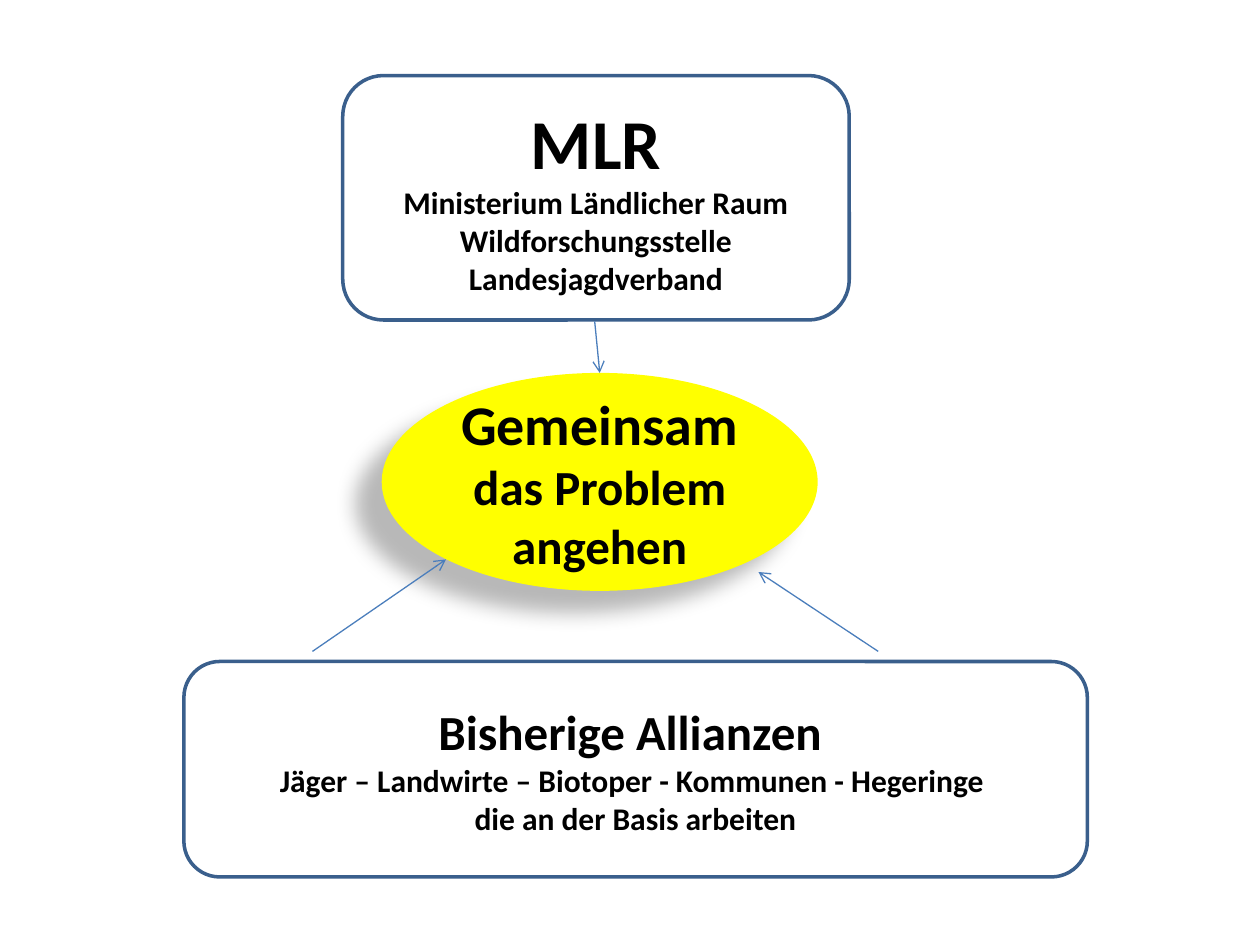
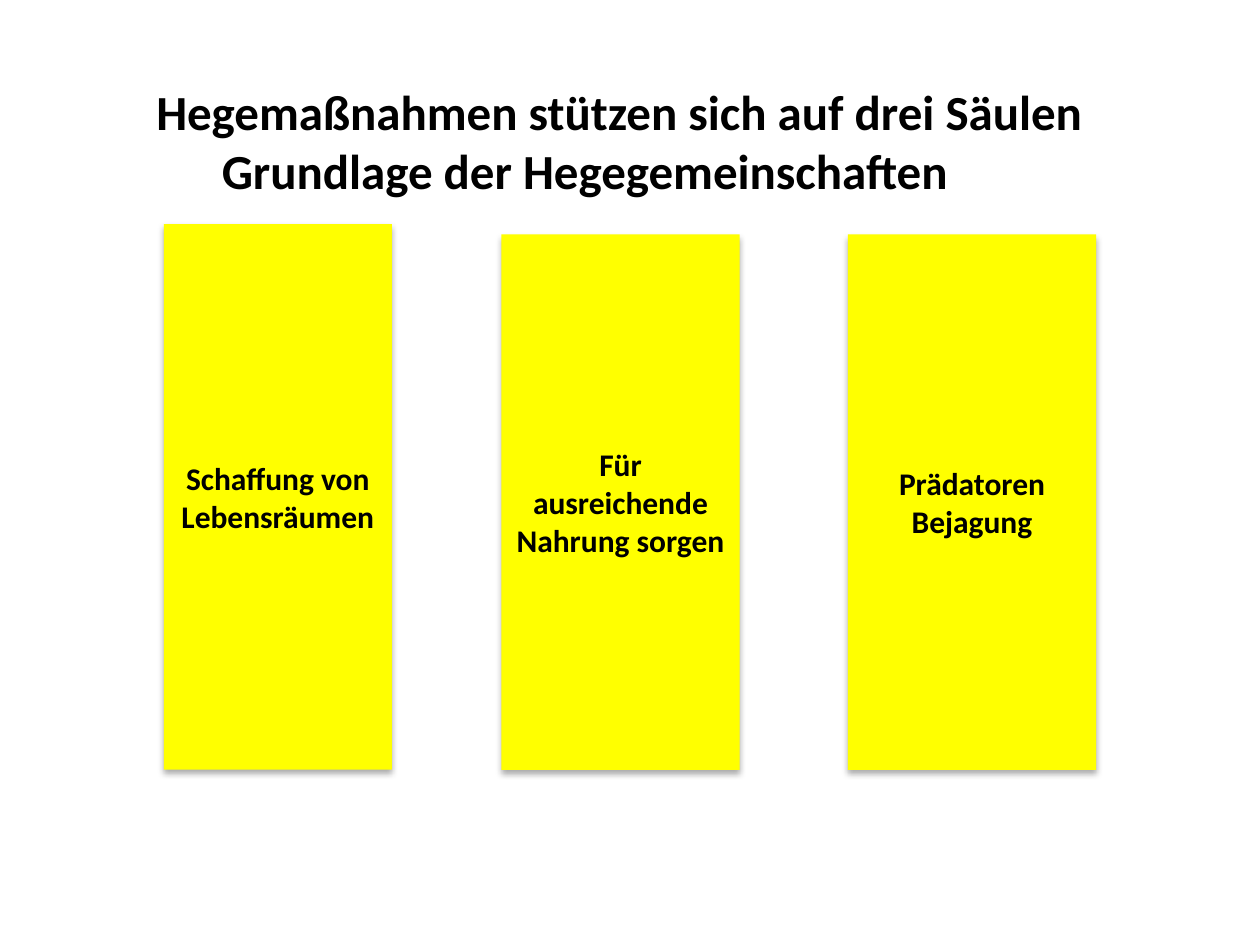
from pptx import Presentation, util as u
from pptx.dml.color import RGBColor
from pptx.enum import shapes, text
from pptx.oxml import ns, parse_xml

YELLOW = RGBColor(0xFF, 0xFF, 0x00)
WHITE = RGBColor(0xFF, 0xFF, 0xFF)
BLACK = RGBColor(0x00, 0x00, 0x00)
NAVY = RGBColor(0x3A, 0x5F, 0x8C)
BLUE = RGBColor(0x4B, 0x7E, 0xBC)
FONT = "Calibri"
COLS, ROWS = 100, 75
BIG, MID, LARGE, SMALL = 40, 32, 28, 18
DEEP = (28, 11.8, 19.7, 141)
SOFT = (32, 3.5, 2.2, 90)
KIND = shapes.MSO_SHAPE


class Deck:
    """Draws styled elements on a grid of 100 columns and 75 rows."""

    def __init__(self):
        self.prs = Presentation()
        self.prs.slide_width = u.Inches(10)
        self.prs.slide_height = u.Inches(7.5)
        self.slide = None

    def page(self, layout):
        self.slide = self.prs.slides.add_slide(self.prs.slide_layouts[layout])

    def spot(self, col, row):
        return (int(self.prs.slide_width * col / COLS),
                int(self.prs.slide_height * row / ROWS))

    def label(self, frame, paras, align, anchor):
        frame.word_wrap = True
        frame.auto_size = text.MSO_AUTO_SIZE.NONE
        frame.vertical_anchor = anchor
        for i, runs in enumerate(paras):
            para = frame.add_paragraph() if i else frame.paragraphs[0]
            para.alignment = align
            for words, size in runs:
                run = para.add_run()
                run.text = words
                run.font.name, run.font.size = FONT, u.Pt(size)
                run.font.bold = True
                run.font.color.rgb = BLACK

    def shade(self, shape, look):
        alpha, blur, dist, angle = look
        glow = parse_xml(
            f'<a:outerShdw {ns.nsdecls("a")} blurRad="{u.Pt(blur)}" '
            f'dist="{u.Pt(dist)}" dir="{angle * 60000}" algn="ctr" rotWithShape="0">'
            f'<a:srgbClr val="{BLACK}"><a:alpha val="{alpha * 1000}"/></a:srgbClr>'
            '</a:outerShdw>')
        shape._element.spPr.find(ns.qn("a:effectLst")).append(glow)

    def box(self, kind, place, paras, fill, edge=None, look=None):
        shape = self.slide.shapes.add_shape(
            kind, *self.spot(*place[:2]), *self.spot(*place[2:]))
        shape.fill.solid()
        shape.fill.fore_color.rgb = fill
        if edge:
            shape.line.color.rgb = edge
            shape.line.width = u.Pt(2)
        else:
            shape.line.fill.background()
        shape.shadow.inherit = False
        if look:
            self.shade(shape, look)
        self.label(shape.text_frame, paras, text.PP_ALIGN.CENTER,
                   text.MSO_ANCHOR.MIDDLE)

    def arrow(self, start, end):
        line = self.slide.shapes.add_connector(
            shapes.MSO_CONNECTOR.STRAIGHT, *self.spot(*start), *self.spot(*end))
        line.line.color.rgb = BLUE
        line.line.width = u.Pt(0.75)
        props = line._element.spPr
        props.find(ns.qn("a:ln")).append(
            parse_xml(f'<a:tailEnd {ns.nsdecls("a")} type="arrow"/>'))
        props.append(parse_xml(f'<a:effectLst {ns.nsdecls("a")}/>'))

    def title(self, place, lines, indent):
        head = self.slide.shapes.title
        head.left, head.top = self.spot(*place[:2])
        head.width, head.height = self.spot(*place[2:])
        self.label(head.text_frame, [[(line, LARGE)] for line in lines],
                   text.PP_ALIGN.LEFT, text.MSO_ANCHOR.TOP)
        last = head.text_frame.paragraphs[-1]
        last._p.get_or_add_pPr().set("marL", str(self.spot(indent, 0)[0]))


def goal(deck):
    deck.page(6)
    deck.box(KIND.OVAL, (30.3, 29.6, 34.6, 17.3),
             [[("Gemeinsam ", MID), ("das Problem angehen", LARGE)]],
             YELLOW, look=DEEP)
    deck.box(KIND.ROUNDED_RECTANGLE, (14.6, 52.5, 71.7, 17.1),
             [[("Bisherige Allianzen ", LARGE)],
              [("Jäger – Landwirte – Biotoper - Kommunen - Hegeringe ", SMALL)],
              [("die an der Basis arbeiten", SMALL)]], WHITE, NAVY)
    deck.box(KIND.ROUNDED_RECTANGLE, (27.2, 6, 40.2, 19.4),
             [[("MLR", BIG)],
              [("Ministerium Ländlicher Raum", SMALL)],
              [("Wildforschungsstelle", SMALL)],
              [("Landesjagdverband", SMALL)]], WHITE, NAVY)
    for start, end in (((24.8, 51.7), (35.4, 44.4)),
                       ((69.7, 51.7), (60.2, 45.4)),
                       ((47.2, 25.5), (47.6, 29.6))):
        deck.arrow(start, end)


def pillars(deck):
    deck.page(5)
    base = 61.1
    for col, top, wide, words in (
            (13, 17.8, 18.1, "Schaffung von Lebensräumen"),
            (39.8, 18.6, 18.9, "Für ausreichende Nahrung sorgen"),
            (67.3, 18.6, 19.7, "Prädatoren Bejagung")):
        deck.box(KIND.RECTANGLE, (col, top, wide, base - top),
                 [[(words, SMALL)]], YELLOW, look=SOFT)
    deck.title((11.4, 6, 77.2, 10.4),
               ("Hegemaßnahmen stützen sich auf drei Säulen",
                "Grundlage der Hegegemeinschaften"), 5.2)


def main():
    deck = Deck()
    goal(deck)
    pillars(deck)
    deck.prs.save("out.pptx")


if __name__ == "__main__":
    main()
